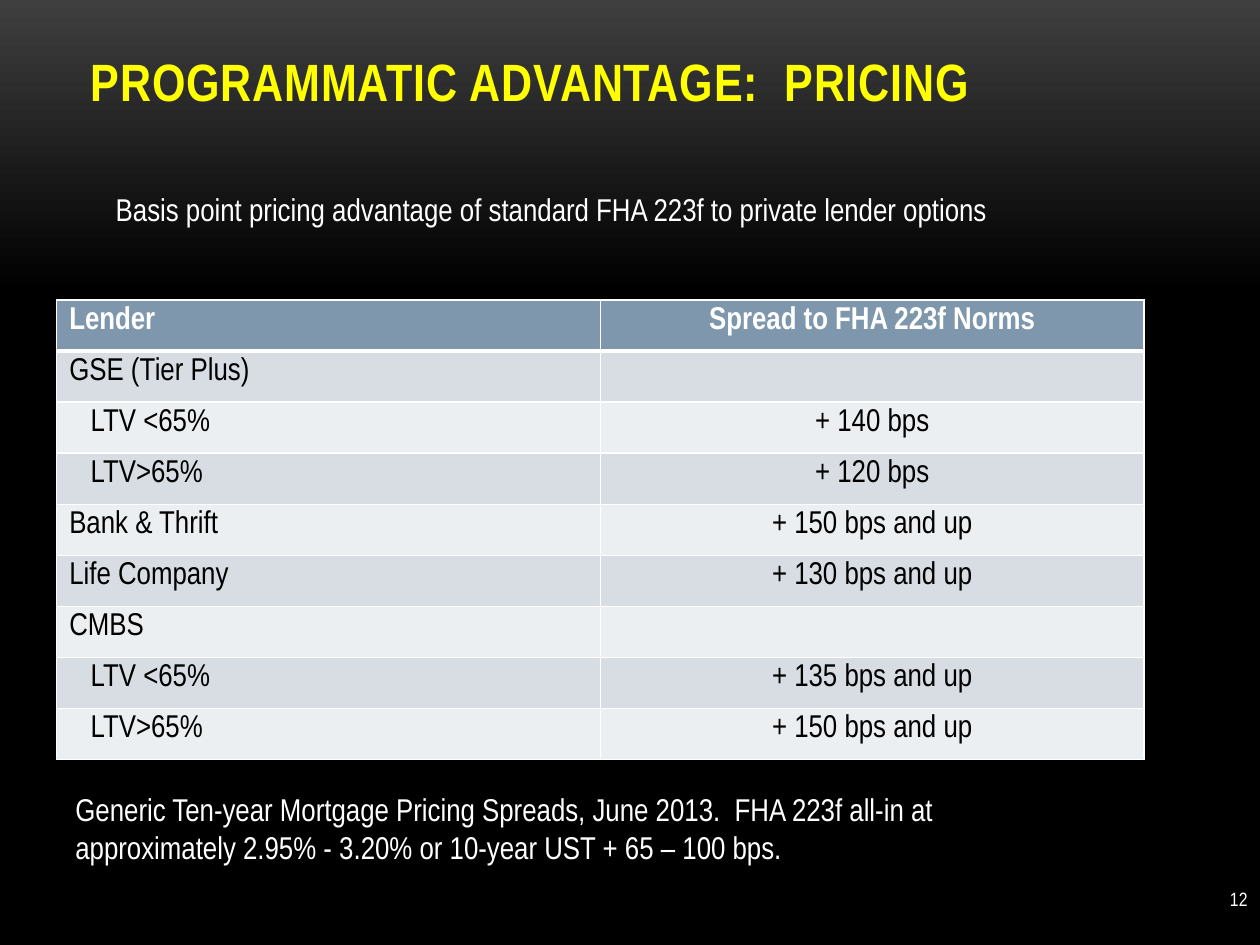
from typing import NamedTuple

from lxml import etree
from pptx import Presentation
from pptx.dml.color import RGBColor
from pptx.enum.text import MSO_ANCHOR, MSO_AUTO_SIZE, PP_ALIGN
from pptx.oxml.ns import qn
from pptx.util import Inches, Pt

LEFT, CENTER, RIGHT = PP_ALIGN.LEFT, PP_ALIGN.CENTER, PP_ALIGN.RIGHT
TOP, MIDDLE, BOTTOM = MSO_ANCHOR.TOP, MSO_ANCHOR.MIDDLE, MSO_ANCHOR.BOTTOM
NO_FIT = MSO_AUTO_SIZE.NONE

FONT = "Arial Narrow"
WHITE = RGBColor(0xFF, 0xFF, 0xFF)
BLACK = RGBColor(0x00, 0x00, 0x00)
GRAY = RGBColor(0x3F, 0x3F, 0x3F)
YELLOW = RGBColor(0xFF, 0xFF, 0x00)
BLUE = RGBColor(0x7E, 0x97, 0xAD)
BANDS = (RGBColor(0xEC, 0xEF, 0xF1), RGBColor(0xD8, 0xDD, 0xE3))


class Note(NamedTuple):
    text: str
    left: float
    top: float
    width: float
    height: float
    size: int = 18
    align: PP_ALIGN = LEFT
    anchor: MSO_ANCHOR = TOP


class Row(NamedTuple):
    lender: str
    spread: str = ""
    indent: float = 0


NOTES = (
    Note("12", 7.67, 6.93, 2.33, 0.4, size=11, align=RIGHT, anchor=MIDDLE),
    Note("Generic Ten-year Mortgage Pricing Spreads, June 2013.  FHA 223f all-in at "
         "approximately 2.95% - 3.20% or 10-year UST + 65 – 100 bps.",
         0.5, 6.22, 7.8, 0.71),
    Note("Basis point pricing advantage of standard FHA 223f to private lender options",
         0.82, 1.46, 8.25, 0.4),
)

ROWS = (
    Row("Lender", "Spread to FHA 223f Norms"),
    Row("GSE (Tier Plus)"),
    Row("LTV <65%", "+ 140 bps", 0.17),
    Row("LTV>65%", "+ 120 bps", 0.17),
    Row("Bank & Thrift", "+ 150 bps and up"),
    Row("Life Company", "+ 130 bps and up"),
    Row("CMBS"),
    Row("LTV <65%", "+ 135 bps and up", 0.17),
    Row("LTV>65%", "+ 150 bps and up", 0.17),
)


def write(frame, text: str, *, size=18, color=WHITE, bold=False, align=LEFT, spacing=0):
    """Put one formatted paragraph in a text frame; spacing is in points."""
    para = frame.paragraphs[0]
    para.alignment = align
    run = para.add_run()
    run.text = text
    font = run.font
    font.name, font.size, font.bold = FONT, Pt(size), bold
    font.color.rgb = color
    if spacing:
        run._r.get_or_add_rPr().set("spc", str(int(spacing * 100)))


def place(shape, left: float, top: float, width: float, height: float):
    shape.left, shape.top = Inches(left), Inches(top)
    shape.width, shape.height = Inches(width), Inches(height)


def paint_back(slide):
    fill = slide.background.fill
    fill.gradient()
    fill.gradient_angle = 270
    for stop, color, pos in zip(fill.gradient_stops, (GRAY, BLACK), (0, 0.31)):
        stop.color.rgb = color
        stop.position = pos


def add_title(slide, text: str):
    title = slide.shapes.title
    place(title, 0.62, 0.33, 8.67, 0.61)
    frame = title.text_frame
    frame.auto_size = NO_FIT
    frame.vertical_anchor = BOTTOM
    write(frame, text, size=30, color=YELLOW, bold=True, spacing=0.5)


def add_note(slide, note: Note):
    box = slide.shapes.add_textbox(0, 0, 0, 0)
    place(box, note.left, note.top, note.width, note.height)
    frame = box.text_frame
    frame.word_wrap = True
    frame.vertical_anchor = note.anchor
    write(frame, note.text, size=note.size, align=note.align)


def add_edge(cell, side: str, width: float):
    props = cell._tc.get_or_add_tcPr()
    line = etree.SubElement(props, qn(f"a:ln{side}"), w=str(Pt(width)))
    fill = etree.SubElement(line, qn("a:solidFill"))
    etree.SubElement(fill, qn("a:srgbClr"), val=str(WHITE))


def add_table(slide, rows: tuple[Row, ...]):
    frame = slide.shapes.add_table(len(rows), 2, Inches(0.45), Inches(2.38),
                                   Inches(8.63), Inches(3.65))
    table = frame.table
    for i, row in enumerate(rows):
        head = i == 0
        edges = {"L": 1, "R": 1, "T": 3 if i == 1 else 1, "B": 3 if head else 1}
        for j, text in enumerate((row.lender, row.spread)):
            cell = table.cell(i, j)
            cell.vertical_anchor = TOP
            cell.margin_top = cell.margin_bottom = Inches(0.05)
            cell.margin_left = Inches(0.1 + (row.indent if j == 0 else 0))
            for side, width in edges.items():
                add_edge(cell, side, width)
            cell.fill.solid()
            cell.fill.fore_color.rgb = BLUE if head else BANDS[i % 2]
            if text:
                write(cell.text_frame, text, color=WHITE if head else BLACK,
                      bold=head, align=CENTER if j else LEFT)


def main():
    deck = Presentation()
    deck.slide_width, deck.slide_height = Inches(10), Inches(7.5)
    slide = deck.slides.add_slide(deck.slide_layouts[5])
    paint_back(slide)
    add_title(slide, "PROGRAMMATIC ADVANTAGE:  PRICING")
    add_table(slide, ROWS)
    for note in NOTES:
        add_note(slide, note)
    deck.save("out.pptx")


if __name__ == "__main__":
    main()
